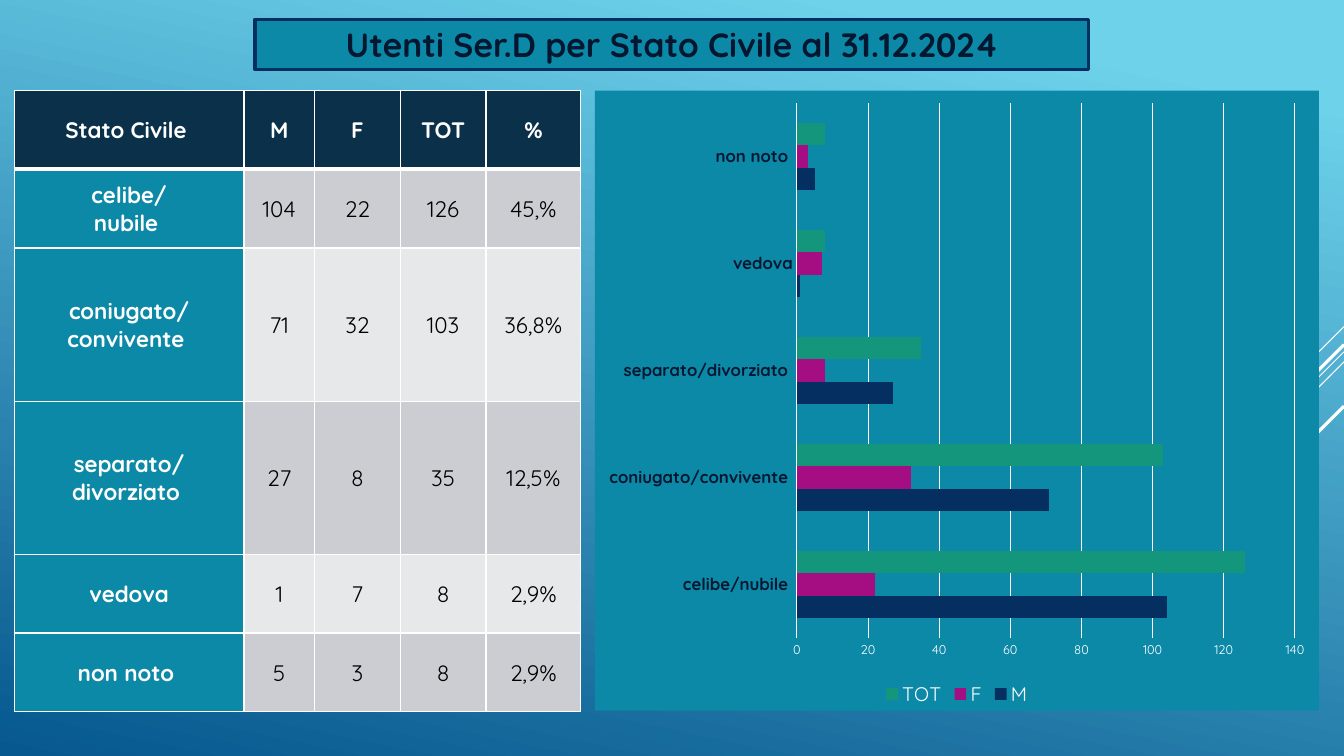
from dataclasses import dataclass

from lxml import etree
from pptx import Presentation
from pptx.chart.data import CategoryChartData
from pptx.dml.color import RGBColor
from pptx.enum.chart import XL_CHART_TYPE, XL_LEGEND_POSITION, XL_TICK_MARK
from pptx.enum.shapes import MSO_CONNECTOR, MSO_SHAPE
from pptx.enum.text import MSO_ANCHOR, PP_ALIGN
from pptx.oxml.ns import qn
from pptx.util import Pt

BAR_CLUSTERED = XL_CHART_TYPE.BAR_CLUSTERED
LEGEND_BOTTOM = XL_LEGEND_POSITION.BOTTOM
NO_TICK = XL_TICK_MARK.NONE
STRAIGHT = MSO_CONNECTOR.STRAIGHT
RECTANGLE = MSO_SHAPE.RECTANGLE
MIDDLE = MSO_ANCHOR.MIDDLE
CENTER = PP_ALIGN.CENTER

EMU_PER_PX = 9144  # 100 px to the inch


def px(length):
    return length * EMU_PER_PX


@dataclass(frozen=True)
class Theme:
    font: str = "Quicksand"
    sky: str = "6ED2EB"
    deep: str = "06588E"
    teal: str = "0D89A8"
    navy: str = "052F61"
    ink: str = "031730"
    header: str = "0A304A"
    white: str = "FFFFFF"
    black: str = "000000"
    bands: tuple = ("CCCDD2", "E7E8EA")
    series: tuple = ("052F61", "A50E82", "14967C")
    title_size: int = 24
    table_size: int = 16
    legend_size: int = 14
    category_size: int = 12
    chart_size: int = 10
    value_size: int = 9


HEADINGS = ("Stato Civile ", "M", "F", "TOT", "%")
ROWS = (
    ("celibe/\nnubile ", 104, 22, 126, "45,%"),
    ("coniugato/\nconvivente ", 71, 32, 103, "36,8%"),
    ("separato/\ndivorziato ", 27, 8, 35, "12,5%"),
    ("vedova", 1, 7, 8, "2,9%"),
    ("non noto ", 5, 3, 8, "2,9%"),
)
COLUMN_WIDTHS = (228, 70, 85, 85, 94)
ROW_HEIGHTS = (78, 78, 152, 152, 78, 78)

# Diagonal rays: start height on the right edge, horizontal run, line width
RAYS = ((324, 100, 0.75), (349, 326, 0.75), (359, 207, 0.75),
        (342, 191, 2.25), (403, 139, 2.25))


class SlideBuilder:
    def __init__(self, slide, theme):
        self.slide = slide
        self.theme = theme

    def set_font(self, font, size, color, bold=False):
        font.name = self.theme.font
        font.size = Pt(size)
        font.bold = bold
        font.color.rgb = RGBColor.from_string(color)

    def paint(self, fill, color):
        fill.solid()
        fill.fore_color.rgb = RGBColor.from_string(color)

    def stroke(self, line, color, width):
        self.paint(line.fill, color)
        line.width = Pt(width)

    def background(self, angle):
        fill = self.slide.background.fill
        fill.gradient()
        fill.gradient_angle = angle
        stops = ((0.1, self.theme.sky), (1, self.theme.deep))
        for stop, (position, color) in zip(fill.gradient_stops, stops):
            stop.position = position
            stop.color.rgb = RGBColor.from_string(color)

    def ray(self, right, top, run, width):
        connector = self.slide.shapes.add_connector(
            STRAIGHT, px(right), px(top), px(right - run), px(top + run))
        self.stroke(connector.line, self.theme.white, width)
        etree.SubElement(connector._element.spPr, qn("a:effectLst"))

    def title(self, left, top, width, height, text):
        shape = self.slide.shapes.add_shape(
            RECTANGLE, px(left), px(top), px(width), px(height))
        shape.shadow.inherit = False
        self.paint(shape.fill, self.theme.teal)
        self.stroke(shape.line, self.theme.navy, 2.25)
        frame = shape.text_frame
        frame.word_wrap = True
        frame.vertical_anchor = MIDDLE
        frame.text = text
        paragraph = frame.paragraphs[0]
        paragraph.alignment = CENTER
        self.set_font(paragraph.font, self.theme.title_size, self.theme.ink, True)

    def borders(self, cell, widths):
        properties = cell._tc.get_or_add_tcPr()
        for index, (side, width) in enumerate(widths.items()):
            line = etree.Element(qn(f"a:ln{side}"), w=str(Pt(width)))
            solid = etree.SubElement(line, qn("a:solidFill"))
            etree.SubElement(solid, qn("a:srgbClr"), val=self.theme.white)
            properties.insert(index, line)

    def cell(self, cell, text, fill, color, bold, widths):
        cell.text = str(text)
        cell.vertical_anchor = MIDDLE
        cell.margin_left = cell.margin_right = cell.margin_top = px(1)
        cell.margin_bottom = 0
        self.paint(cell.fill, fill)
        self.borders(cell, widths)
        for paragraph in cell.text_frame.paragraphs:
            paragraph.alignment = CENTER
            self.set_font(paragraph.font, self.theme.table_size, color, bold)

    def table(self, left, top, column_widths, row_heights, rows):
        theme = self.theme
        table = self.slide.shapes.add_table(
            len(rows), len(column_widths), px(left), px(top),
            px(sum(column_widths)), px(sum(row_heights))).table
        for column, width in zip(table.columns, column_widths):
            column.width = px(width)
        for row, height in zip(table.rows, row_heights):
            row.height = px(height)
        for i, values in enumerate(rows):
            widths = {"L": 1, "R": 1, "T": 3 if i == 1 else 1, "B": 3 if i == 0 else 1}
            for j, value in enumerate(values):
                is_label = i == 0 or j == 0
                if i == 0:
                    fill = theme.header
                else:
                    fill = theme.teal if j == 0 else theme.bands[(i - 1) % 2]
                color = theme.white if is_label else theme.black
                self.cell(table.cell(i, j), value, fill, color, is_label, widths)

    def chart(self, left, top, width, height, categories, series):
        theme = self.theme
        data = CategoryChartData()
        data.categories = categories
        for name, values in series:
            data.add_series(name, values)
        chart = self.slide.shapes.add_chart(
            BAR_CLUSTERED, px(left), px(top), px(width), px(height), data).chart
        chart.has_title = False
        self.set_font(chart.font, theme.chart_size, theme.white)

        # Chart area fill goes ahead of the text properties
        area = etree.Element(qn("c:spPr"))
        solid = etree.SubElement(area, qn("a:solidFill"))
        etree.SubElement(solid, qn("a:srgbClr"), val=theme.teal)
        outline = etree.SubElement(area, qn("a:ln"))
        etree.SubElement(outline, qn("a:noFill"))
        chart._chartSpace.find(qn("c:txPr")).addprevious(area)

        plot = chart.plots[0]
        plot.gap_width = 182
        plot.overlap = 0
        plot.vary_by_categories = False
        for bars, color in zip(plot.series, theme.series):
            self.paint(bars.format.fill, color)

        category_axis, value_axis = chart.category_axis, chart.value_axis
        for axis in (category_axis, value_axis):
            axis.major_tick_mark = axis.minor_tick_mark = NO_TICK
        self.set_font(category_axis.tick_labels.font, theme.category_size, theme.ink, True)
        self.stroke(category_axis.format.line, theme.white, 0.75)
        self.set_font(value_axis.tick_labels.font, theme.value_size, theme.white)
        value_axis.format.line.fill.background()
        value_axis.minimum_scale, value_axis.maximum_scale = 0, 140
        value_axis.major_unit = 20
        self.stroke(value_axis.major_gridlines.format.line, theme.white, 0.75)

        chart.has_legend = True
        chart.legend.position = LEGEND_BOTTOM
        chart.legend.include_in_layout = False
        self.set_font(chart.legend.font, theme.legend_size, theme.white)


def main():
    presentation = Presentation()
    presentation.slide_width, presentation.slide_height = px(1333), px(750)
    slide = presentation.slides.add_slide(presentation.slide_layouts[6])
    builder = SlideBuilder(slide, Theme())

    # Backdrop
    builder.background(258)
    for top, run, width in RAYS:
        builder.ray(1333, top, run, width)

    # Chart and table share the same rows
    categories = [row[0].replace("\n", "") for row in ROWS]
    series = [(HEADINGS[j], [row[j] for row in ROWS]) for j in (1, 2, 3)]
    builder.chart(590, 90, 718, 615, categories, series)
    builder.table(14, 90, COLUMN_WIDTHS, ROW_HEIGHTS, (HEADINGS, *ROWS))

    # Title
    builder.title(253, 19, 827, 50, "Utenti Ser.D per Stato Civile al 31.12.2024")

    presentation.save("out.pptx")


if __name__ == "__main__":
    main()
